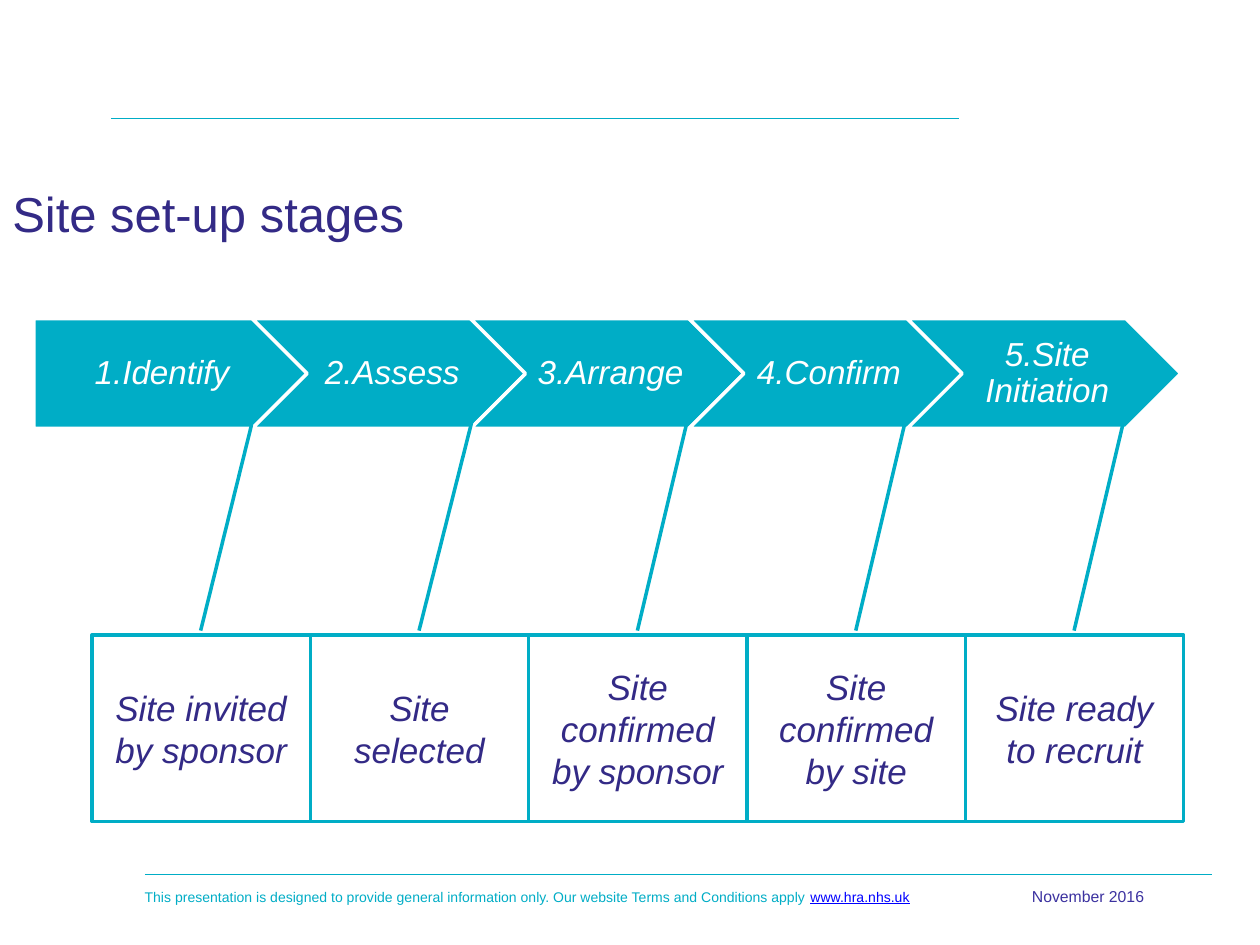
from dataclasses import dataclass

from lxml import etree
from pptx import Presentation
from pptx.dml.color import RGBColor
from pptx.enum import shapes, text
from pptx.oxml.ns import qn
from pptx.util import Inches, Pt

COLORS = {"teal": "00ADC6", "navy": "332A86", "violet": "3C32A0",
          "white": "FFFFFF", "link": "0000FF"}
SHAPE, ALIGN, ANCHOR = shapes.MSO_SHAPE, text.PP_ALIGN, text.MSO_ANCHOR

STEP = 1.733
ARROW_LEFT, ARROW_TOP, ARROW_W, ARROW_H = 0.27, 2.53, 2.17, 0.87
BOX_LEFT, BOX_TOP, BOX_H = 0.73, 5.04, 1.48


@dataclass
class Stage:
    name: str
    outcome: str
    tip_y: float
    tip_x: float


@dataclass
class Run:
    text: str
    size: float
    color: str
    italic: bool = False
    underline: bool = False


STAGES = [
    Stage("1.Identify", "Site invited by sponsor", -1.127, 0.731),
    Stage("2.Assess", "Site selected", -1.15, 0.741),
    Stage("3.Arrange", "Site confirmed by sponsor", -1.171, 0.731),
    Stage("4.Confirm", "Site confirmed by site", -1.127, 0.721),
    Stage("5.Site Initiation", "Site ready to recruit", -1.127, 0.721),
]


def rgb(name: str) -> RGBColor:
    return RGBColor.from_string(COLORS[name])


def write(sp, runs: list[Run], align=ALIGN.LEFT, anchor=ANCHOR.TOP,
          spacing: float = 1.0, **margins) -> None:
    tf = sp.text_frame
    frame = {"word_wrap": True, "vertical_anchor": anchor, **margins}
    for key, value in frame.items():
        setattr(tf, key, value)
    p = tf.paragraphs[0]
    p.alignment, p.line_spacing = align, spacing
    for run in runs:
        r = p.add_run()
        r.text = run.text
        fmt = {"name": "Arial", "size": Pt(run.size), "italic": run.italic,
               "underline": run.underline}
        for key, value in fmt.items():
            setattr(r.font, key, value)
        r.font.color.rgb = rgb(run.color)


def add_text(s, x: float, y: float, w: float, h: float, runs: list[Run], **fmt) -> None:
    write(s.shapes.add_textbox(Inches(x), Inches(y), Inches(w), Inches(h)), runs, **fmt)


def add_box(s, kind, x: float, y: float, w: float, h: float, fill: str, line: str):
    sp = s.shapes.add_shape(kind, Inches(x), Inches(y), Inches(w), Inches(h))
    sp.shadow.inherit = False
    sp.fill.solid()
    sp.fill.fore_color.rgb = rgb(fill)
    sp.line.color.rgb = rgb(line)
    sp.line.width = Pt(2)
    return sp


def add_rule(s, x1: float, x2: float, y: float) -> None:
    c = s.shapes.add_connector(shapes.MSO_CONNECTOR.STRAIGHT,
                               Inches(x1), Inches(y), Inches(x2), Inches(y))
    c.line.color.rgb = rgb("teal")
    c.line.width = Pt(1)
    etree.SubElement(c._element.spPr, qn("a:effectLst"))


def add_arrow(s, i: int, stage: Stage) -> None:
    kind = SHAPE.CHEVRON if i else SHAPE.PENTAGON
    sp = add_box(s, kind, ARROW_LEFT + i * STEP, ARROW_TOP, ARROW_W, ARROW_H,
                 "teal", "white")
    write(sp, [Run(stage.name, 19, "white", italic=True)], ALIGN.CENTER, ANCHOR.MIDDLE, 0.9,
          margin_left=Inches(0.08 if i else 0.11), margin_right=Inches(0.03),
          margin_top=Inches(0.06), margin_bottom=Inches(0.06))


def add_outcome(s, i: int, stage: Stage) -> None:
    """Add a callout box whose leader line reaches up to its stage arrow."""
    sp = add_box(s, SHAPE.LINE_CALLOUT_1, BOX_LEFT + i * STEP, BOX_TOP, STEP, BOX_H,
                 "white", "teal")
    for n, value in enumerate((-0.024, 0.498, stage.tip_y, stage.tip_x)):
        sp.adjustments[n] = value
    write(sp, [Run(stage.outcome, 20, "navy", italic=True)], ALIGN.CENTER, ANCHOR.MIDDLE)


def main() -> None:
    prs = Presentation()
    prs.slide_width, prs.slide_height = Inches(10), Inches(7.5)
    s = prs.slides.add_slide(prs.slide_layouts[6])

    add_rule(s, 0.88, 7.61, 0.94)
    add_rule(s, 1.15, 9.62, 6.94)
    add_text(s, 1.05, 7, 6.36, 0.24, [
        Run("This presentation is designed to provide general information only. "
            "Our website Terms and Conditions apply ", 8, "teal"),
        Run("www.hra.nhs.uk", 8, "link", underline=True)])
    add_text(s, 0, 1.2, 8.27, 0.98, [Run("Site set-up stages", 28, "navy")],
             anchor=ANCHOR.MIDDLE)
    for draw in (add_arrow, add_outcome):
        for i, stage in enumerate(STAGES):
            draw(s, i, stage)
    add_text(s, 7.63, 6.99, 2.01, 0.4, [Run("November 2016", 9, "violet")],
             align=ALIGN.CENTER)

    prs.save("out.pptx")


if __name__ == "__main__":
    main()
